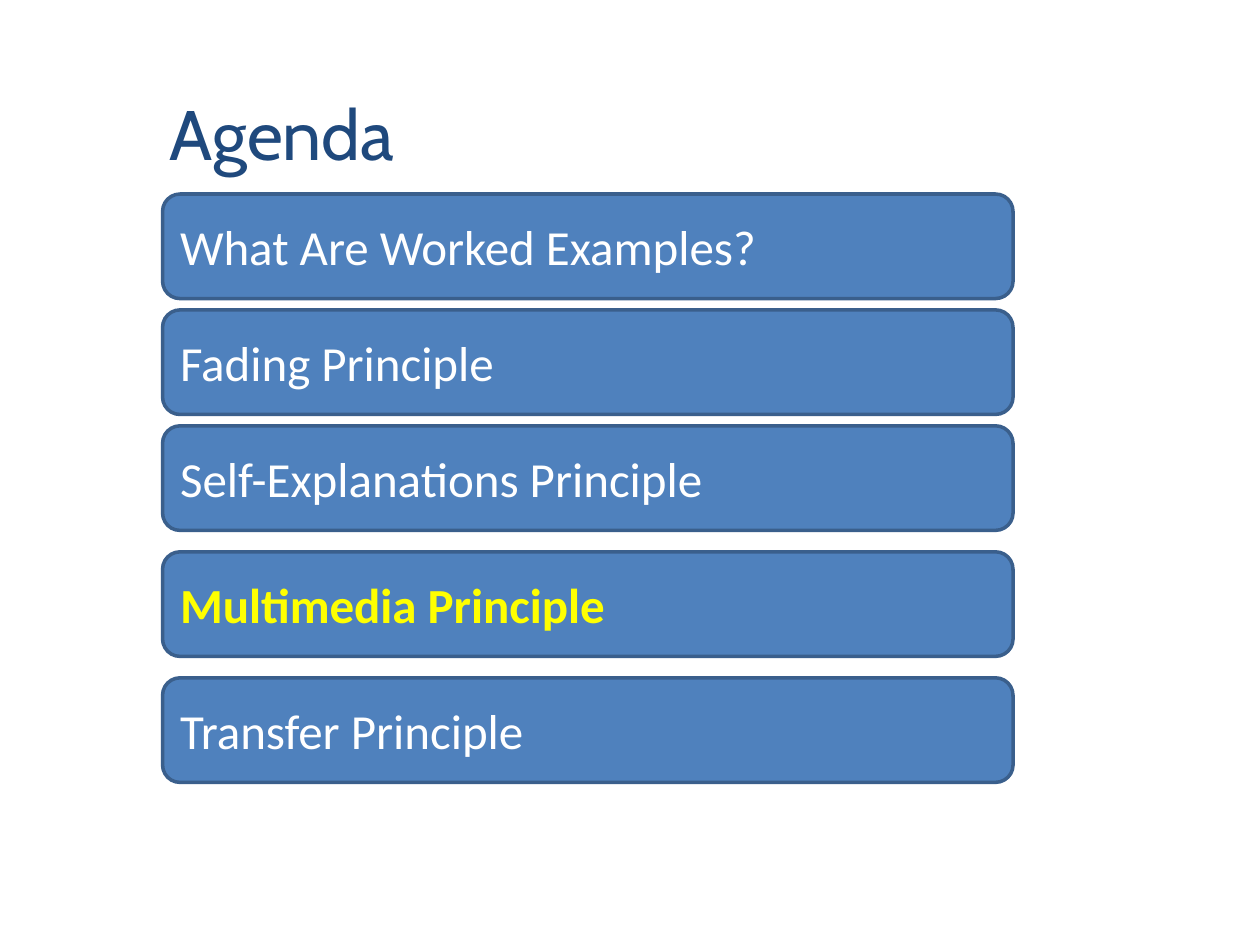
from pptx import Presentation
from pptx.dml.color import RGBColor
from pptx.enum.shapes import MSO_SHAPE
from pptx.enum.text import MSO_ANCHOR, MSO_AUTO_SIZE, PP_ALIGN
from pptx.util import Inches, Pt

COLORS = {"title": "1F497D", "bar": "4F81BD", "edge": "3A5F8C",
          "text": "FFFFFF", "current": "FFFF00"}


def rgb(name):
    return RGBColor.from_string(COLORS[name])


def write(tf, text, color, **font):
    p = tf.paragraphs[0]
    p.alignment = PP_ALIGN.LEFT
    r = p.add_run()
    r.text = text
    r.font.color.rgb = rgb(color)
    for name, value in font.items():
        setattr(r.font, name, value)


prs = Presentation()
prs.slide_width, prs.slide_height = Inches(10), Inches(7.5)
s = prs.slides.add_slide(prs.slide_layouts[6])

# Title
tf = s.shapes.add_textbox(Inches(1.25), Inches(0.67), Inches(2.03), Inches(0.77)).text_frame
tf.word_wrap = False
tf.auto_size = MSO_AUTO_SIZE.SHAPE_TO_FIT_TEXT
write(tf, "Agenda", "title", name="Cabin", size=Pt(40))

# Agenda bars: the row pitch widens from the current topic on
topics = ["What Are Worked Examples?", "Fading Principle", "Self-Explanations Principle",
          "Multimedia Principle", "Transfer Principle"]
current = 3
left, top, width, height = 1.29, 1.54, 6.75, 0.83
for i, topic in enumerate(topics):
    sp = s.shapes.add_shape(MSO_SHAPE.ROUNDED_RECTANGLE, Inches(left), Inches(top),
                            Inches(width), Inches(height))
    sp.shadow.inherit = False
    sp.fill.solid()
    sp.fill.fore_color.rgb = rgb("bar")
    sp.line.color.rgb = rgb("edge")
    sp.line.width = Pt(2)
    tf = sp.text_frame
    tf.word_wrap = True
    tf.vertical_anchor = MSO_ANCHOR.MIDDLE
    write(tf, topic, "current" if i == current else "text",
          name="Calibri", size=Pt(28), bold=i == current)
    top += 0.92 if i + 1 < current else 1

prs.save("out.pptx")
